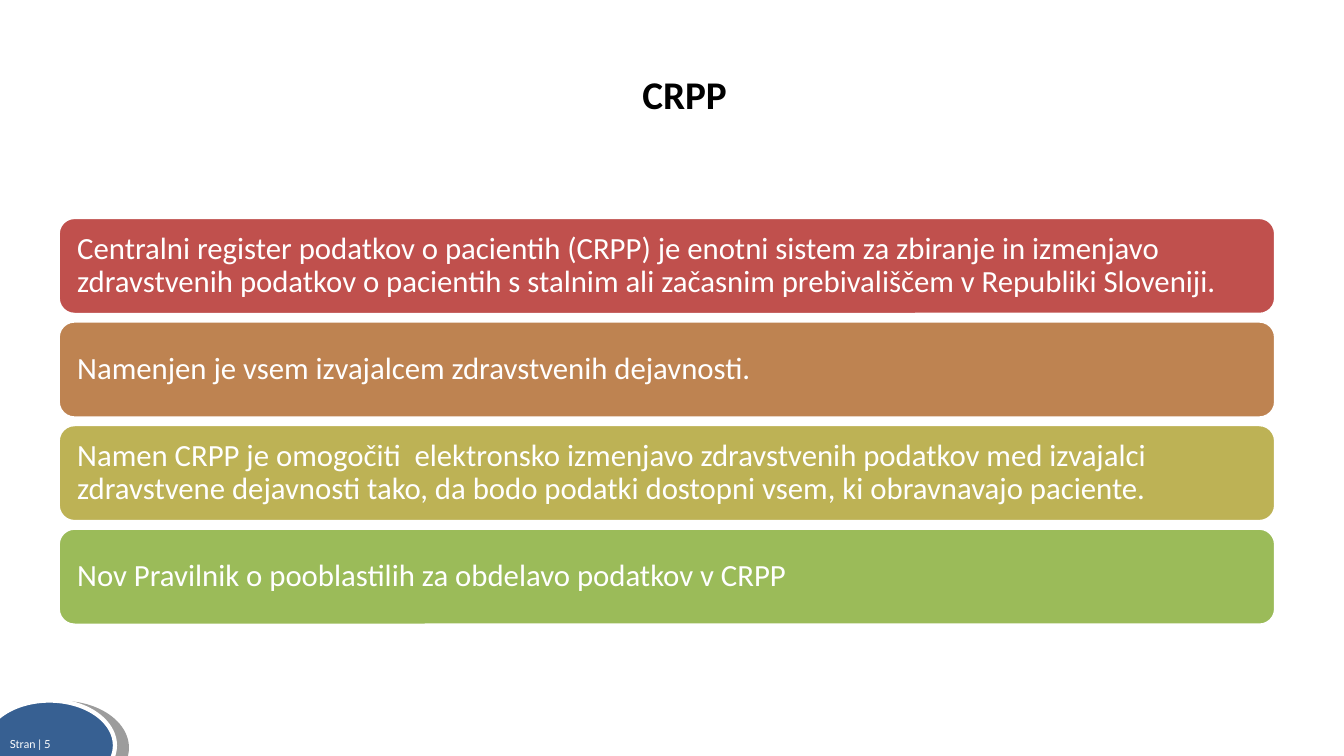
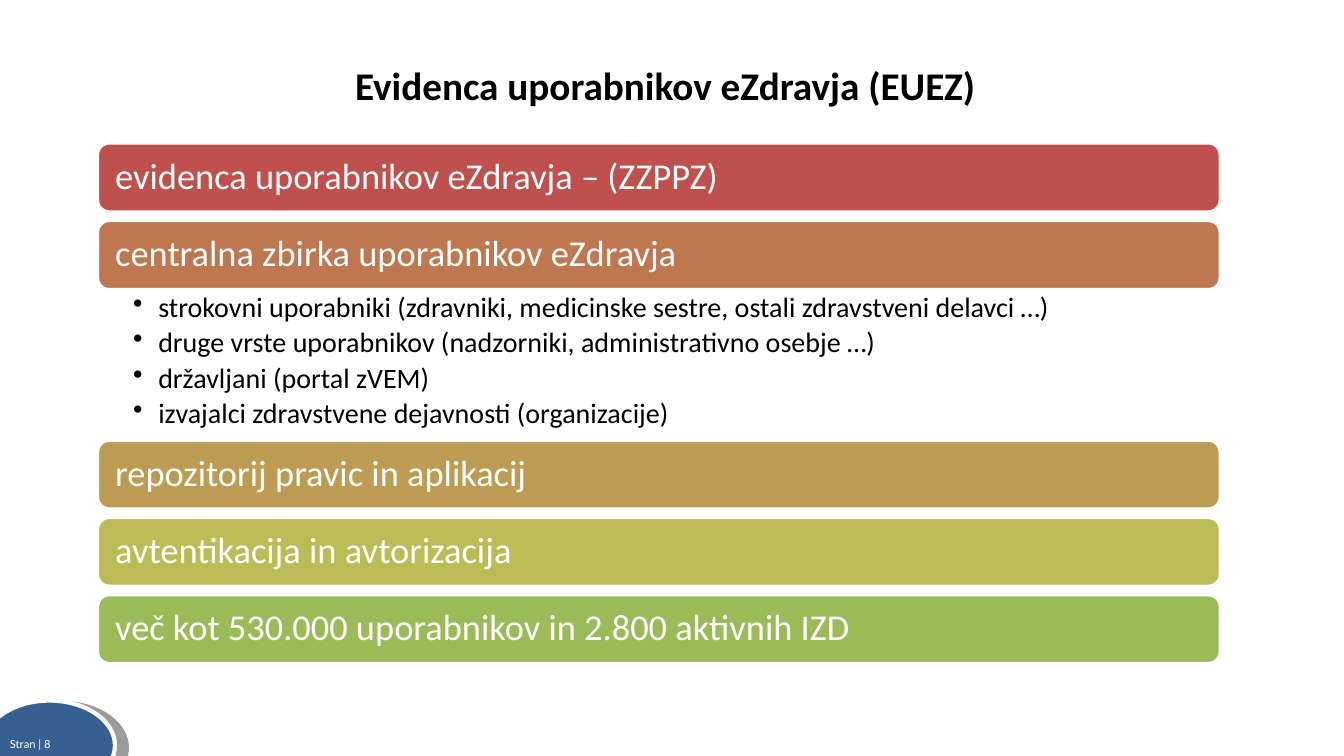
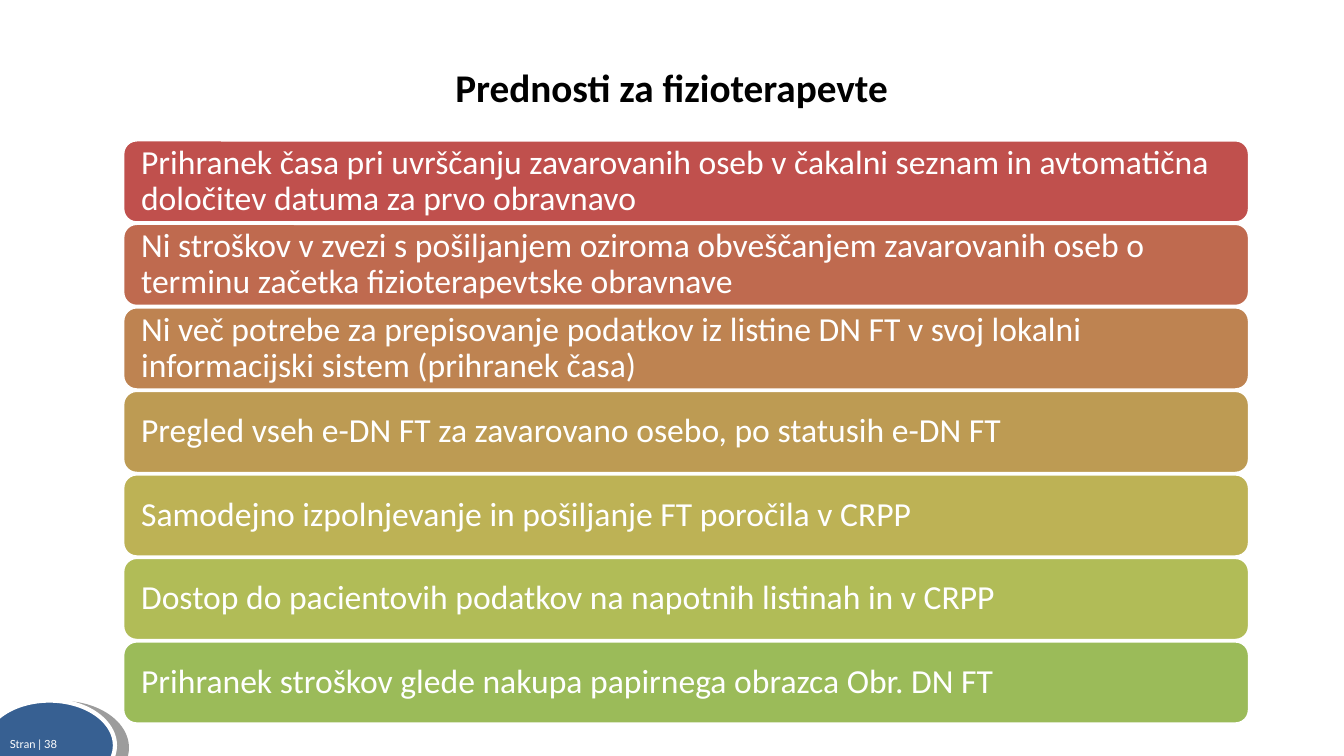
from lxml import etree
from pptx import Presentation
from pptx.dml.color import RGBColor
from pptx.enum.shapes import MSO_SHAPE
from pptx.enum.text import MSO_ANCHOR, MSO_AUTO_SIZE, PP_ALIGN
from pptx.oxml.ns import qn
from pptx.util import Inches, Pt

ELLIPSE, ROUNDED = MSO_SHAPE.OVAL, MSO_SHAPE.ROUNDED_RECTANGLE
TOP, MIDDLE = MSO_ANCHOR.TOP, MSO_ANCHOR.MIDDLE
LEFT, CENTER = PP_ALIGN.LEFT, PP_ALIGN.CENTER
NO_AUTOFIT = MSO_AUTO_SIZE.NONE
TITLE_ONLY = 5

COLOURS = {
    "white": "FFFFFF", "black": "000000", "badge": "376092",
    "red": "C0504D", "rust": "BF6A4F", "copper": "BF7750", "brown": "BE8351",
    "ochre": "BD9B53", "sand": "BDB255", "olive": "BCBC56", "lime": "B1BC57",
    "green": "9BBB59",
}
TITLE_FONT = {"name": "Calibri", "size": Pt(28), "bold": True}
BODY_FONT = {"name": "Calibri"}
PAGE_FONT = {"name": "Lato", "size": Pt(8)}


def rgb(name):
    return RGBColor.from_string(COLOURS[name])


def place(shape, box):
    shape.left, shape.top, shape.width, shape.height = map(Inches, box)


def set_frame(frame, margins, anchor=TOP, wrap=True):
    """Margins are left, top, right, bottom in inches."""
    left, top, right, bottom = map(Inches, margins)
    values = {"margin_left": left, "margin_top": top, "margin_right": right,
              "margin_bottom": bottom, "vertical_anchor": anchor,
              "word_wrap": wrap, "auto_size": NO_AUTOFIT}
    for name, value in values.items():
        setattr(frame, name, value)


def write(paragraph, text, font, colour, alignment=LEFT, line_spacing=1.0):
    paragraph.alignment = alignment
    paragraph.line_spacing = line_spacing
    run = paragraph.add_run()
    run.text = text
    for name, value in font.items():
        setattr(run.font, name, value)
    run.font.color.rgb = rgb(colour)


def add_filled_shape(slide, preset, box, fill, line_width):
    shape = slide.shapes.add_shape(preset, *map(Inches, box))
    shape.shadow.inherit = False
    shape.fill.solid()
    shape.fill.fore_color.rgb = rgb(fill)
    shape.line.color.rgb = rgb("white")
    shape.line.width = Pt(line_width)
    return shape


def add_hard_shadow(shape, distance, degrees, opacity):
    effects = shape.element.spPr.find(qn("a:effectLst"))
    shadow = etree.SubElement(
        effects, qn("a:outerShdw"), blurRad="0", dist=str(Pt(distance)),
        dir=str(degrees * 60000), algn="ctr", rotWithShape="0")
    colour = etree.SubElement(shadow, qn("a:srgbClr"), val=COLOURS["black"])
    etree.SubElement(colour, qn("a:alpha"), val=str(opacity * 1000))


def add_page_badge(slide, number):
    badge = add_filled_shape(slide, ELLIPSE, (-0.16, 6.95, 1.3, 0.89), "badge", 3)
    add_hard_shadow(badge, 8.7, 11, 38)
    label = slide.shapes.add_textbox(*map(Inches, (0, 7.27, 0.74, 0.24)))
    set_frame(label.text_frame, (0.1, 0.05, 0.1, 0.05), wrap=False)
    write(label.text_frame.paragraphs[0], f"Stran | {number}", PAGE_FONT, "white")


def add_titled_slide(presentation, number, text, box, margins=(0.1, 0.05, 0.1, 0.05)):
    slide = presentation.slides.add_slide(presentation.slide_layouts[TITLE_ONLY])
    title = slide.shapes.title
    place(title, box)
    set_frame(title.text_frame, margins)
    write(title.text_frame.paragraphs[0], text, TITLE_FONT, "black", CENTER, 1.06)
    add_page_badge(slide, number)
    return slide


def add_bars(slide, box, gap, size, bars):
    """Fill the box with equal bars, each given as (colour, text)."""
    left, top, width, height = box
    bar_height = (height - gap * (len(bars) - 1)) / len(bars)
    for row, (colour, text) in enumerate(bars):
        bar_box = (left, top + row * (bar_height + gap), width, bar_height)
        bar = add_filled_shape(slide, ROUNDED, bar_box, colour, 2)
        set_frame(bar.text_frame, (0.14, 0.04, 0.14, 0.04), MIDDLE)
        write(bar.text_frame.paragraphs[0], text, BODY_FONT | {"size": Pt(size)},
              "white", line_spacing=0.9)


def add_bullets(slide, box, size, items):
    frame = slide.shapes.add_textbox(*map(Inches, box)).text_frame
    set_frame(frame, (0.35, 0.04, 0.2, 0.04))
    for index, item in enumerate(items):
        paragraph = frame.add_paragraph() if index else frame.paragraphs[0]
        properties = paragraph._p.get_or_add_pPr()
        properties.set("marL", str(Inches(0.25)))
        properties.set("indent", str(Inches(-0.25)))
        etree.SubElement(properties, qn("a:buChar"), char="•")
        paragraph.space_after = Pt(3.7)
        write(paragraph, item, BODY_FONT | {"size": Pt(size)}, "black",
              line_spacing=0.9)


def build_register_slide(presentation):
    slide = add_titled_slide(presentation, 5, "CRPP", (2.16, 0.38, 8.99, 1.11),
                             (0.37, 0.29, 0.1, 0.05))
    add_bars(slide, (0.58, 2.16, 12.07, 4.04), 0.07, 22, [
        ("red", "Centralni register podatkov o pacientih (CRPP) je enotni sistem za "
                "zbiranje in izmenjavo zdravstvenih podatkov o pacientih s stalnim ali "
                "začasnim prebivališčem v Republiki Sloveniji."),
        ("brown", "Namenjen je vsem izvajalcem zdravstvenih dejavnosti."),
        ("sand", "Namen CRPP je omogočiti  elektronsko izmenjavo zdravstvenih podatkov "
                 "med izvajalci zdravstvene dejavnosti tako, da bodo podatki dostopni "
                 "vsem, ki obravnavajo paciente."),
        ("green", "Nov Pravilnik o pooblastilih za obdelavo podatkov v CRPP"),
    ])


def build_users_slide(presentation):
    slide = add_titled_slide(presentation, 8, "Evidenca uporabnikov eZdravja (EUEZ)",
                             (2.05, 0.53, 9.09, 0.7))
    left, width, gap, size = 0.97, 11.13, 0.09, 26
    add_bars(slide, (left, 1.42, width, 1.45), gap, size, [
        ("red", "evidenca uporabnikov eZdravja – (ZZPPZ)"),
        ("copper", "centralna zbirka uporabnikov eZdravja"),
    ])
    add_bullets(slide, (left, 2.87, width, 1.5), 20, [
        "strokovni uporabniki (zdravniki, medicinske sestre, ostali zdravstveni delavci …)",
        "druge vrste uporabnikov (nadzorniki, administrativno osebje …)",
        "državljani (portal zVEM)",
        "izvajalci zdravstvene dejavnosti (organizacije)",
    ])
    add_bars(slide, (left, 4.37, width, 2.21), gap, size, [
        ("ochre", "repozitorij pravic in aplikacij"),
        ("olive", "avtentikacija in avtorizacija"),
        ("green", "več kot 530.000 uporabnikov in 2.800 aktivnih IZD"),
    ])


def build_benefits_slide(presentation):
    slide = add_titled_slide(presentation, 38, "Prednosti za fizioterapevte",
                             (0.67, 0.55, 11.98, 1.12))
    add_bars(slide, (1.22, 1.39, 11.17, 5.79), 0.01, 24, [
        ("red", "Prihranek časa pri uvrščanju zavarovanih oseb v čakalni seznam in "
                "avtomatična določitev datuma za prvo obravnavo"),
        ("rust", "Ni stroškov v zvezi s pošiljanjem oziroma obveščanjem zavarovanih oseb "
                 "o terminu začetka fizioterapevtske obravnave"),
        ("brown", "Ni več potrebe za prepisovanje podatkov iz listine DN FT v svoj "
                  "lokalni informacijski sistem (prihranek časa)"),
        ("ochre", "Pregled vseh e-DN FT za zavarovano osebo, po statusih e-DN FT"),
        ("sand", "Samodejno izpolnjevanje in pošiljanje FT poročila v CRPP"),
        ("lime", "Dostop do pacientovih podatkov na napotnih listinah in v CRPP"),
        ("green", "Prihranek stroškov glede nakupa papirnega obrazca Obr. DN FT"),
    ])


def main():
    presentation = Presentation()
    presentation.slide_width = Inches(13.33)
    presentation.slide_height = Inches(7.5)
    build_register_slide(presentation)
    build_users_slide(presentation)
    build_benefits_slide(presentation)
    presentation.save("out.pptx")


if __name__ == "__main__":
    main()
